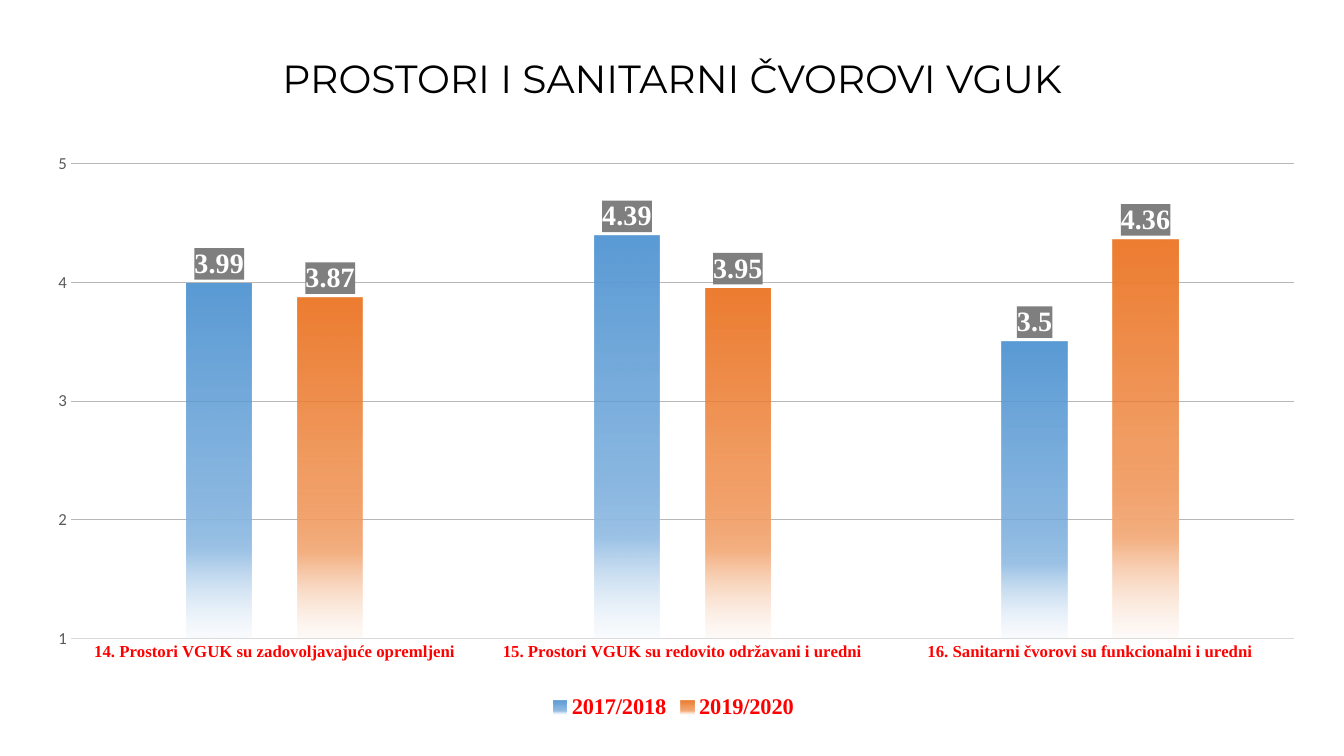
from dataclasses import dataclass

from lxml.etree import SubElement
from pptx import Presentation
from pptx.chart.data import CategoryChartData
from pptx.dml.color import RGBColor
from pptx.enum.chart import XL_CHART_TYPE, XL_LABEL_POSITION, XL_LEGEND_POSITION, XL_TICK_MARK
from pptx.enum.text import MSO_ANCHOR, PP_ALIGN
from pptx.oxml import parse_xml
from pptx.oxml.ns import nsdecls, qn
from pptx.util import Pt

EMU_PER_PX = 9525
BLANK_LAYOUT = 6


@dataclass(frozen=True)
class Theme:
    background = "FFFFFF"
    axis_line = "D9D9D9"
    gridline = "B7B7B7"
    label_box = "7F7F7F"
    hairline = Pt(0.75)
    title = {"name": "Montserrat", "size": Pt(28), "color": "000000"}
    chart = {"name": "Calibri", "size": Pt(10), "color": "000000"}
    values = {"name": "Calibri", "size": Pt(12), "color": "595959"}
    categories = {"name": "Times New Roman", "size": Pt(12), "bold": True, "color": "FF0000"}
    legend = {**categories, "size": Pt(16)}
    labels = {**categories, "size": Pt(20), "color": "FFFFFF"}


# Each gradient lists its full, lighter and palest colour.
SERIES = [
    {"name": "2017/2018", "values": (3.99, 4.39, 3.5), "number_format": "General",
     "gradient": ("5B9BD5", "9DC3E6", "DEEBF7")},
    {"name": "2019/2020", "values": (3.87, 3.95, 4.36), "number_format": "0.00",
     "gradient": ("ED7D31", "F4B183", "FBE5D6")},
]
CATEGORIES = [
    "14. Prostori VGUK su zadovoljavajuće opremljeni",
    "15. Prostori VGUK su redovito održavani i uredni",
    "16. Sanitarni čvorovi su funkcionalni i uredni",
]
PLOT_AREA = {"x": 0.026, "y": 0.018, "w": 0.962, "h": 0.832}


def px(length):
    return length * EMU_PER_PX


def set_attributes(target, values):
    for name, value in values.items():
        setattr(target, name, value)


def set_font(font, values):
    set_attributes(font, {name: value for name, value in values.items() if name != "color"})
    font.color.rgb = RGBColor.from_string(values["color"])


def set_line(line, color, width):
    line.color.rgb = RGBColor.from_string(color)
    line.width = width


def fading_fill(full, lighter, palest):
    """Return a top-to-bottom gradient that grows transparent towards the base."""
    stops = [(0, full, 100), (51, full, 75), (75, lighter, 100), (100, palest, 15)]
    stop_xml = "".join(
        f'<a:gs pos="{position * 1000}"><a:srgbClr val="{color}">'
        f'<a:alpha val="{alpha * 1000}"/></a:srgbClr></a:gs>'
        for position, color, alpha in stops
    )
    return parse_xml(
        f'<a:gradFill {nsdecls("a")}><a:gsLst>{stop_xml}</a:gsLst>'
        '<a:lin ang="5400000" scaled="0"/></a:gradFill>'
    )


class SlideBuilder:
    def __init__(self, slide, theme):
        self.slide = slide
        self.theme = theme
        set_background = slide.background.fill
        set_background.solid()
        set_background.fore_color.rgb = RGBColor.from_string(theme.background)

    def add_title(self, text, left, top, width, height):
        shape = self.slide.shapes.add_textbox(px(left), px(top), px(width), px(height))
        frame = shape.text_frame
        set_attributes(frame, {"word_wrap": True, "vertical_anchor": MSO_ANCHOR.MIDDLE})
        paragraph = frame.paragraphs[0]
        set_attributes(paragraph, {"alignment": PP_ALIGN.CENTER, "line_spacing": 0.9})
        run = paragraph.add_run()
        run.text = text
        set_font(run.font, self.theme.title)

    def add_column_chart(self, categories, series_list, left, top, width, height):
        data = CategoryChartData()
        data.categories = categories
        for entry in series_list:
            data.add_series(entry["name"], entry["values"])
        chart = self.slide.shapes.add_chart(
            XL_CHART_TYPE.COLUMN_CLUSTERED, px(left), px(top), px(width), px(height), data
        ).chart
        set_attributes(chart, {"has_title": False, "has_legend": True})
        set_font(chart.font, self.theme.chart)
        set_attributes(chart.legend, {"position": XL_LEGEND_POSITION.BOTTOM,
                                      "include_in_layout": False})
        set_font(chart.legend.font, self.theme.legend)
        plot = chart.plots[0]
        set_attributes(plot, {"gap_width": 355, "overlap": -70, "vary_by_categories": False})
        for series, entry in zip(plot.series, series_list):
            self.format_series(series, entry)
        self.format_axes(chart)
        self.place_plot_area(chart)

    def format_series(self, series, entry):
        series.invert_if_negative = False
        properties = series._element.get_or_add_spPr()
        properties.insert(0, fading_fill(*entry["gradient"]))
        labels = series.data_labels
        set_attributes(labels, {"show_value": True, "position": XL_LABEL_POSITION.OUTSIDE_END,
                                "number_format": entry["number_format"],
                                "number_format_is_linked": False})
        set_font(labels.font, self.theme.labels)
        label_box = parse_xml(
            f'<c:spPr {nsdecls("c", "a")}><a:solidFill>'
            f'<a:srgbClr val="{self.theme.label_box}"/></a:solidFill></c:spPr>'
        )
        labels._element.find(qn("c:txPr")).addprevious(label_box)

    def format_axes(self, chart):
        theme = self.theme
        category_axis, value_axis = chart.category_axis, chart.value_axis
        for axis, font in ((category_axis, theme.categories), (value_axis, theme.values)):
            set_attributes(axis, {"major_tick_mark": XL_TICK_MARK.NONE,
                                  "minor_tick_mark": XL_TICK_MARK.NONE})
            set_font(axis.tick_labels.font, font)
        set_line(category_axis.format.line, theme.axis_line, theme.hairline)
        set_attributes(value_axis, {"minimum_scale": 1, "maximum_scale": 5, "major_unit": 1,
                                    "has_major_gridlines": True})
        value_axis.format.line.fill.background()
        set_line(value_axis.major_gridlines.format.line, theme.gridline, theme.hairline)

    def place_plot_area(self, chart):
        plot_area = chart._chartSpace.chart.plotArea
        for old_layout in plot_area.findall(qn("c:layout")):
            plot_area.remove(old_layout)
        layout = parse_xml(f'<c:layout {nsdecls("c")}><c:manualLayout/></c:layout>')
        settings = {"layoutTarget": "inner", "xMode": "edge", "yMode": "edge", **PLOT_AREA}
        for name, value in settings.items():
            SubElement(layout[0], qn(f"c:{name}")).set("val", str(value))
        plot_area.insert(0, layout)


def main():
    presentation = Presentation()
    set_attributes(presentation, {"slide_width": px(1280), "slide_height": px(720)})
    slide = presentation.slides.add_slide(presentation.slide_layouts[BLANK_LAYOUT])
    builder = SlideBuilder(slide, Theme())
    builder.add_title("PROSTORI I SANITARNI ČVOROVI VGUK", 88, 7, 1104, 139)
    builder.add_column_chart(CATEGORIES, SERIES, 36, 146, 1211, 544)
    presentation.save("out.pptx")


if __name__ == "__main__":
    main()
